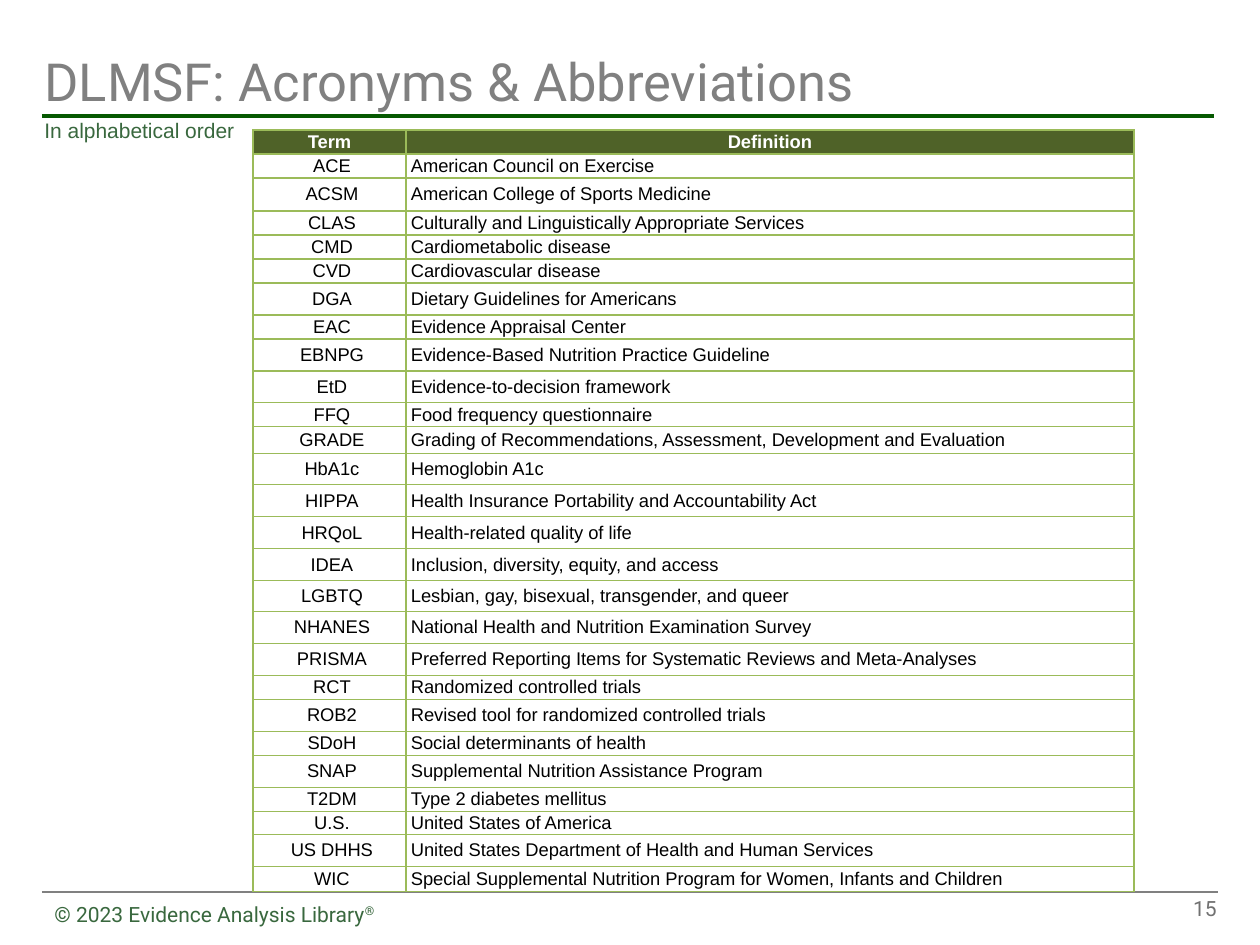
from dataclasses import dataclass

from lxml import etree
from pptx import Presentation, util as u
from pptx.dml.color import RGBColor
from pptx.enum import shapes, text
from pptx.oxml.ns import qn


@dataclass(frozen=True)
class Theme:
    """Colours, fonts and type sizes of the slide."""
    heading: str = "808080"
    page: str = "717171"
    green: str = "39683E"
    rule: str = "065901"
    header: str = "4F6228"
    grid: str = "9BBB59"
    white: str = "FFFFFF"
    black: str = "000000"
    display: str = "Roboto"
    body: str = "Arial"
    title_size: float = 30
    note_size: float = 12
    table_size: float = 10.5


THEME = Theme()
COLUMN_WIDTHS = (153, 728)
HEADER_HEIGHT = 24
ACRONYMS = [
    ("ACE", "American Council on Exercise", 24),
    ("ACSM", "American College of Sports Medicine", 33),
    ("CLAS", "Culturally and Linguistically Appropriate Services", 24),
    ("CMD", "Cardiometabolic disease", 24),
    ("CVD", "Cardiovascular disease", 24),
    ("DGA", "Dietary Guidelines for Americans", 32),
    ("EAC", "Evidence Appraisal Center", 24),
    ("EBNPG", "Evidence-Based Nutrition Practice Guideline", 32),
    ("EtD", "Evidence-to-decision framework", 32),
    ("FFQ", "Food frequency questionnaire", 24),
    ("GRADE", "Grading of Recommendations, Assessment, Development and Evaluation", 27),
    ("HbA1c", "Hemoglobin A1c", 31),
    ("HIPPA", "Health Insurance Portability and Accountability Act", 32),
    ("HRQoL", "Health-related quality of life", 32),
    ("IDEA", "Inclusion, diversity, equity, and access", 32),
    ("LGBTQ", "Lesbian, gay, bisexual, transgender, and queer", 31),
    ("NHANES", "National Health and Nutrition Examination Survey", 32),
    ("PRISMA", "Preferred Reporting Items for Systematic Reviews and Meta-Analyses", 32),
    ("RCT", "Randomized controlled trials", 24),
    ("ROB2", "Revised tool for randomized controlled trials", 32),
    ("SDoH", "Social determinants of health", 24),
    ("SNAP", "Supplemental Nutrition Assistance Program", 32),
    ("T2DM", "Type 2 diabetes mellitus", 24),
    ("U.S.", "United States of America", 23),
    ("US DHHS", "United States Department of Health and Human Services", 32),
    ("WIC", "Special Supplemental Nutrition Program for Women, Infants and Children", 25),
]


def px(length):
    """Turn whole pixels into EMU at 126 pixels to the inch."""
    return u.Emu(round(length * 914400 / 126))


def apply(target, values):
    """Set each named attribute on the target."""
    for name, value in values.items():
        setattr(target, name, value)


def add_run(paragraph, words, color, size, face, bold=False):
    """Add a formatted run to a paragraph."""
    run = paragraph.add_run()
    run.text = words
    apply(run.font, {"name": face, "size": u.Pt(size), "bold": bold})
    run.font.color.rgb = RGBColor.from_string(color)
    return run


def add_label(slide, box, words, color, size, face, align=text.PP_ALIGN.LEFT, **frame_format):
    """Add a one-line text box and return its paragraph."""
    frame = slide.shapes.add_textbox(*map(px, box)).text_frame
    apply(frame, {"word_wrap": True, **frame_format})
    paragraph = frame.paragraphs[0]
    paragraph.alignment = align
    add_run(paragraph, words, color, size, face)
    return paragraph


def add_rule(slide, left, right, y, color, width):
    """Draw a horizontal rule."""
    rule = slide.shapes.add_connector(
        shapes.MSO_CONNECTOR.STRAIGHT, px(left), px(y), px(right), px(y))
    rule.line.color.rgb = RGBColor.from_string(color)
    rule.line.width = u.Pt(width)
    etree.SubElement(rule._element.spPr, qn("a:effectLst"))


def add_borders(cell):
    """Outline a cell on all four sides, ahead of its fill."""
    properties = cell._tc.get_or_add_tcPr()
    for position, side in enumerate(("lnL", "lnR", "lnT", "lnB")):
        border = etree.Element(qn(f"a:{side}"), w=str(u.Pt(1)))
        fill = etree.SubElement(border, qn("a:solidFill"))
        etree.SubElement(fill, qn("a:srgbClr"), val=THEME.grid)
        properties.insert(position, border)


def fill_cell(cell, words, align, header):
    """Write and format one table cell."""
    apply(cell, {
        "margin_left": px(0 if header else 5), "margin_right": 0,
        "margin_top": 0, "margin_bottom": 0,
        "vertical_anchor": text.MSO_ANCHOR.MIDDLE,
    })
    if header:
        cell.fill.solid()
        cell.fill.fore_color.rgb = RGBColor.from_string(THEME.header)
    else:
        cell.fill.background()
    add_borders(cell)
    paragraph = cell.text_frame.paragraphs[0]
    paragraph.alignment = align
    add_run(paragraph, words, THEME.white if header else THEME.black,
            THEME.table_size, THEME.body, header)


def add_glossary(slide, left, top):
    """Build the table of terms and definitions."""
    entries = [("Term", "Definition", HEADER_HEIGHT), *ACRONYMS]
    total = sum(height for _, _, height in entries)
    glossary = slide.shapes.add_table(
        len(entries), len(COLUMN_WIDTHS), px(left), px(top),
        px(sum(COLUMN_WIDTHS)), px(total)).table
    glossary.horz_banding = False
    for column, width in zip(glossary.columns, COLUMN_WIDTHS):
        column.width = px(width)
    for index, (term, definition, height) in enumerate(entries):
        header = index == 0
        glossary.rows[index].height = px(height)
        definition_align = text.PP_ALIGN.CENTER if header else text.PP_ALIGN.LEFT
        fill_cell(glossary.cell(index, 0), term, text.PP_ALIGN.CENTER, header)
        fill_cell(glossary.cell(index, 1), definition, definition_align, header)


def main():
    """Build and save the acronyms slide."""
    deck = Presentation()
    apply(deck, {"slide_width": px(1260), "slide_height": px(945)})
    slide = deck.slides.add_slide(deck.slide_layouts[6])
    middle = {"vertical_anchor": text.MSO_ANCHOR.MIDDLE}
    snug = {"word_wrap": False, "auto_size": text.MSO_AUTO_SIZE.SHAPE_TO_FIT_TEXT}

    add_rule(slide, 42, 1218, 892, THEME.heading, 1)
    add_rule(slide, 42, 1214, 116, THEME.rule, 2.25)
    add_label(slide, (32, 42, 1134, 78), "DLMSF: Acronyms & Abbreviations",
              THEME.heading, THEME.title_size, THEME.display, **middle)
    add_label(slide, (935, 892, 294, 32), "15", THEME.page, THEME.note_size,
              THEME.display, text.PP_ALIGN.RIGHT, **middle)
    add_label(slide, (32, 111, 217, 38), "In alphabetical order",
              THEME.green, THEME.note_size, THEME.body, **snug)
    credit = add_label(slide, (42, 895, 358, 38), "© 2023 Evidence Analysis Library",
                       THEME.green, THEME.note_size, THEME.display, **snug)
    mark = add_run(credit, "®", THEME.green, THEME.note_size, THEME.display)
    mark._r.get_or_add_rPr().set("baseline", "30000")
    add_glossary(slide, 253, 130)
    deck.save("out.pptx")


if __name__ == "__main__":
    main()
